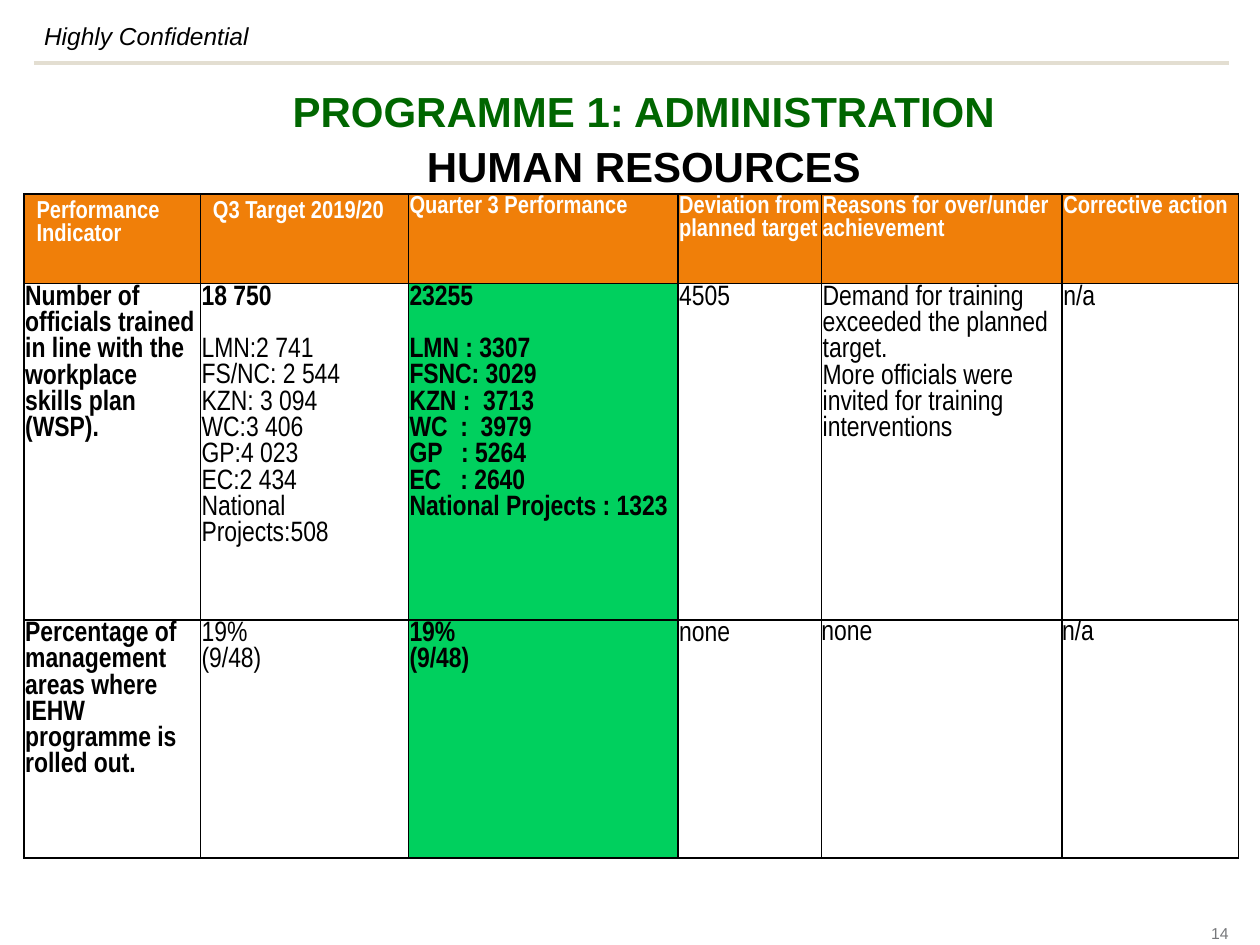
from lxml import etree
from pptx import Presentation
from pptx.dml.color import RGBColor
from pptx.enum import shapes, text
from pptx.oxml import ns
from pptx.util import Inches, Pt

BLACK = RGBColor(0, 0, 0)
WHITE = RGBColor(255, 255, 255)
GREEN = RGBColor(0, 0x66, 0)
GREY = RGBColor(0x77, 0x78, 0x7B)
SAND = RGBColor(0xE3, 0xDE, 0xD1)
ORANGE = RGBColor(0xF0, 0x7F, 0x09)
LIME = RGBColor(0, 0xD0, 0x5E)


def add_run(para, words, size, color, bold=False, italic=False, face="Arial"):
    run = para.add_run()
    run.text = words
    font = run.font
    font.name, font.size = face, Pt(size)
    font.bold, font.italic = bold, italic
    font.color.rgb = color


def add_box(left, top, width, height, inset):
    """Add a wrapping text box and return its text frame."""
    box = deck_slide.shapes.add_textbox(
        Inches(left), Inches(top), Inches(width), Inches(height))
    frame = box.text_frame
    frame.word_wrap = True
    frame.margin_left = frame.margin_right = Inches(inset)
    frame.margin_top = frame.margin_bottom = Inches(inset)
    return frame


deck = Presentation()
deck.slide_width, deck.slide_height = Inches(10), Inches(7.5)
deck_slide = deck.slides.add_slide(deck.slide_layouts[6])

# Header rule, page number and marking
rule = deck_slide.shapes.add_connector(
    shapes.MSO_CONNECTOR.STRAIGHT,
    Inches(0.27), Inches(0.5), Inches(9.75), Inches(0.5))
rule.line.color.rgb = SAND
rule.line.width = Pt(2.25)
etree.SubElement(rule._element.spPr, ns.qn("a:effectLst"))

page = add_box(9.46, 7.33, 0.29, 0.15, 0)
page.vertical_anchor = text.MSO_ANCHOR.MIDDLE
page.paragraphs[0].alignment = text.PP_ALIGN.RIGHT
add_run(page.paragraphs[0], "14", 9, GREY)

mark = add_box(0.27, 0.09, 1.84, 0.39, 0.08)
add_run(mark.paragraphs[0], "Highly Confidential", 14, BLACK, italic=True)

# Performance table
widths = [1.4, 1.65, 2.14, 1.14, 1.91, 1.4]
heights = [0.71, 2.67, 1.89]
heads = ["Performance Indicator", "Q3 Target 2019/20",
         "Quarter 3 Performance", "Deviation from planned target",
         "Reasons for over/under achievement", "Corrective action"]
rows = [
    [[head] for head in heads],
    [["Number of officials trained in line with the workplace skills plan "
      "(WSP)."],
     ["18 750", "LMN:2 741", "FS/NC: 2 544", "KZN: 3 094", "WC:3 406",
      "GP:4 023", "EC:2 434", "National Projects:508"],
     ["23255", "LMN : 3307", "FSNC: 3029", "KZN :  3713", "WC  :  3979",
      "GP   : 5264", "EC   : 2640", "National Projects : 1323"],
     ["4505"],
     ["Demand for training exceeded the planned target.",
      "More officials were invited for training interventions"],
     ["n/a"]],
    [["Percentage of management areas where IEHW programme is rolled out."],
     ["19%", "(9/48)"], ["19%", "(9/48)"], ["none"], ["none"], ["n/a"]],
]

grid = deck_slide.shapes.add_table(
    len(rows), len(widths), Inches(0.19), Inches(1.54),
    Inches(sum(widths)), Inches(sum(heights))).table
grid.first_row = grid.horz_banding = False
for col, width in zip(grid.columns, widths):
    col.width = Inches(width)
for row, height in zip(grid.rows, heights):
    row.height = Inches(height)

for r, row in enumerate(rows):
    for c, lines in enumerate(row):
        cell = grid.cell(r, c)
        head = r == 0
        if not (head and c < 2):
            inset = 0 if r == 2 and c > 3 else 0.01
            cell.margin_left = cell.margin_right = Inches(inset)
            cell.margin_top = Inches(inset)
            cell.margin_bottom = 0

        props = cell._tc.get_or_add_tcPr()
        for side in ("lnL", "lnR", "lnT", "lnB"):
            edge = etree.SubElement(props, ns.qn("a:" + side), w=str(Pt(1)))
            fill = etree.SubElement(edge, ns.qn("a:solidFill"))
            etree.SubElement(fill, ns.qn("a:srgbClr"), val=str(BLACK))
        if head or c == 2:
            cell.fill.solid()
            cell.fill.fore_color.rgb = ORANGE if head else LIME
        else:
            cell.fill.background()

        frame = cell.text_frame
        for n, line in enumerate(lines):
            para = frame.add_paragraph() if n else frame.paragraphs[0]
            total = n == 0 and len(lines) == 8
            if total:
                para.space_after = Pt(15)
            add_run(para, line, 14 if head else 16, WHITE if head else BLACK,
                    bold=head or c in (0, 2) or total, face="Arial Narrow")

# Title
title = add_box(0.38, 0.61, 9.46, 0.44, 0)
title.margin_top = Inches(0.03)
for n, (line, color) in enumerate([
        ("PROGRAMME 1: ADMINISTRATION", GREEN), ("HUMAN RESOURCES", BLACK)]):
    para = title.add_paragraph() if n else title.paragraphs[0]
    para.alignment = text.PP_ALIGN.CENTER
    para.line_spacing = 1.1
    add_run(para, line, 24, color, bold=True)

deck.save("out.pptx")
